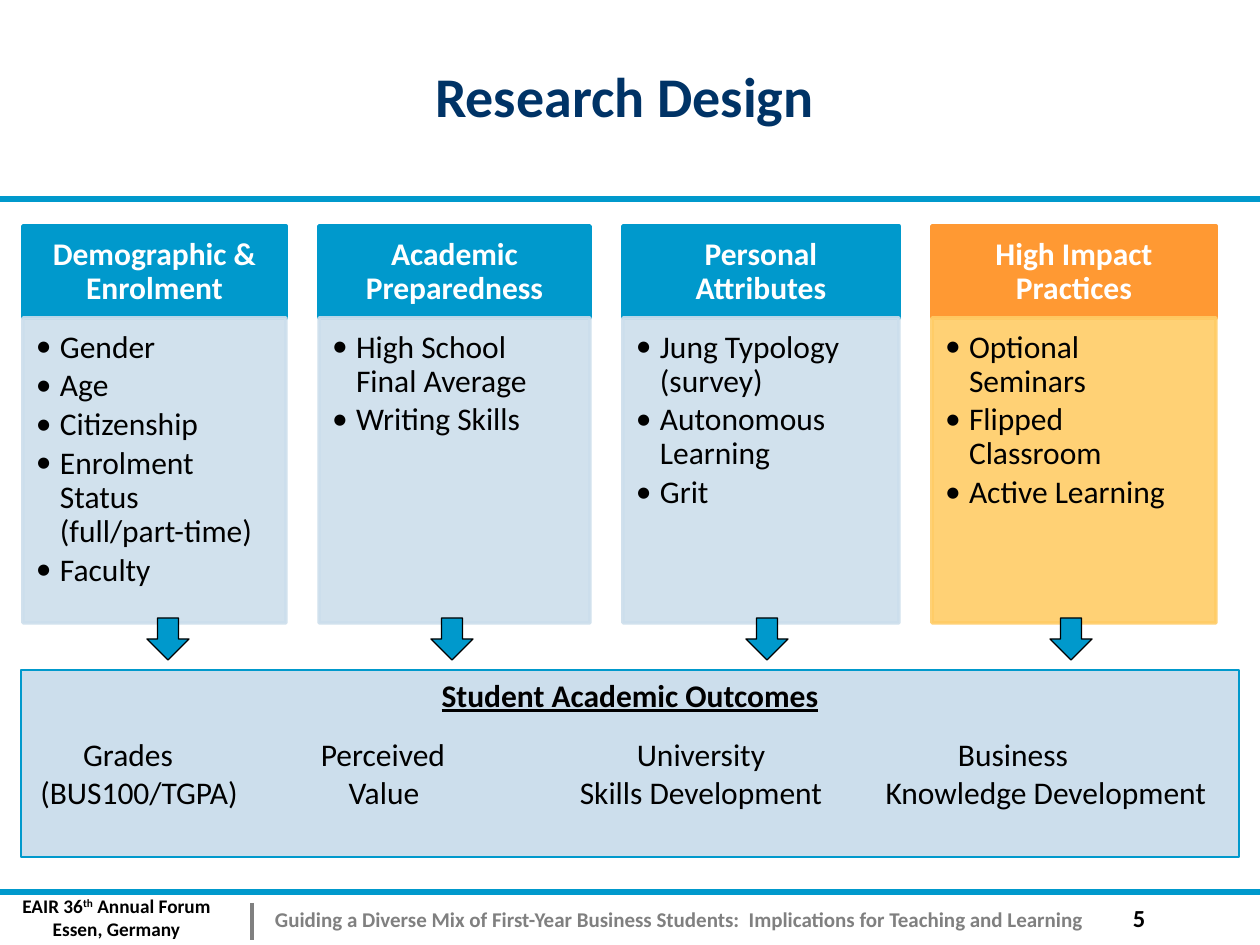
import dataclasses

import lxml.etree
import pptx
import pptx.dml.color
import pptx.enum.shapes
import pptx.enum.text
import pptx.oxml.ns
import pptx.util

SHAPE = pptx.enum.shapes.MSO_SHAPE
ALIGN = pptx.enum.text.PP_ALIGN
ANCHOR = pptx.enum.text.MSO_ANCHOR
qn = pptx.oxml.ns.qn


@dataclasses.dataclass(frozen=True)
class Theme:
    font: str = "Calibri"
    navy: str = "003366"
    blue: str = "0099CC"
    pale_blue: str = "CCDEEC"
    orange: str = "FF9933"
    pale_orange: str = "FFCC66"
    white: str = "FFFFFF"
    black: str = "000000"
    gray: str = "808080"
    title_size: int = 32
    body_size: int = 18
    number_size: int = 14
    footer_size: int = 12
    event_size: int = 11


def px(length):
    return pptx.util.Emu(round(length * 914400 / 126))


def rgb(color):
    return pptx.dml.color.RGBColor.from_string(color)


class SlideBuilder:
    """Draws styled elements on the current slide."""

    def __init__(self, theme, slide):
        self.theme = theme
        self.slide = slide

    def line(self, start, end, color, width):
        connector = self.slide.shapes.add_connector(
            pptx.enum.shapes.MSO_CONNECTOR.STRAIGHT, *map(px, start + end))
        connector.line.color.rgb = rgb(color)
        connector.line.width = pptx.util.Pt(width)
        lxml.etree.SubElement(connector._element.spPr, qn("a:effectLst"))

    def shape(self, kind, box, fill, line, width, opacity=100):
        shape = self.slide.shapes.add_shape(kind, *map(px, box))
        shape.shadow.inherit = False
        shape.fill.solid()
        shape.fill.fore_color.rgb = rgb(fill)
        shape.line.color.rgb = rgb(line)
        shape.line.width = pptx.util.Pt(width)
        if opacity < 100:
            for color in shape._element.spPr.iter(qn("a:srgbClr")):
                lxml.etree.SubElement(color, qn("a:alpha"), val=str(opacity * 1000))
        return shape

    def text_box(self, box, anchor=ANCHOR.TOP):
        shape = self.slide.shapes.add_textbox(*map(px, box))
        self.frame(shape, anchor)
        return shape

    def frame(self, shape, anchor, insets=(13, 6, 13, 6)):
        frame = shape.text_frame
        frame.word_wrap = True
        frame.vertical_anchor = anchor
        (frame.margin_left, frame.margin_top,
         frame.margin_right, frame.margin_bottom) = map(px, insets)

    def paragraph(self, shape, text, size, color, bold=False, align=ALIGN.LEFT,
                  spacing=1.0, after=0, bullet=False, tabs=(), tab_align="ctr"):
        frame = shape.text_frame
        paragraph = frame.paragraphs[0]
        if paragraph.runs:
            paragraph = frame.add_paragraph()
        paragraph.alignment = align
        paragraph.line_spacing = spacing
        paragraph.space_after = pptx.util.Pt(after)
        properties = paragraph._p.get_or_add_pPr()
        if bullet:
            properties.set("marL", str(px(24)))
            properties.set("indent", str(-px(24)))
            lxml.etree.SubElement(properties, qn("a:buFont"), typeface=self.theme.font)
            lxml.etree.SubElement(properties, qn("a:buChar"), char="•")
        if tabs:
            tab_list = lxml.etree.SubElement(properties, qn("a:tabLst"))
            for position in tabs:
                lxml.etree.SubElement(tab_list, qn("a:tab"), pos=str(px(position)), algn=tab_align)
        paragraph.font.name = self.theme.font
        paragraph.font.size = pptx.util.Pt(size)
        paragraph.font.bold = bold
        paragraph.font.color.rgb = rgb(color)
        paragraph.add_run().text = text
        return paragraph

    def column(self, left, width, heading, items, dark, pale):
        theme = self.theme
        header = self.shape(SHAPE.RECTANGLE, (left, 226, width, 92), dark, dark, 2)
        self.frame(header, ANCHOR.MIDDLE, (18, 10, 18, 10))
        self.paragraph(header, heading, theme.body_size, theme.white, True, ALIGN.CENTER, 0.9)
        body = self.shape(SHAPE.RECTANGLE, (left, 318, width, 305), pale, pale, 2, 90)
        self.frame(body, ANCHOR.TOP, (13, 13, 18, 20))
        for item in items:
            self.paragraph(body, item, theme.body_size, theme.black,
                           spacing=0.9, after=2.7, bullet=True)

    def arrow(self, left):
        self.shape(SHAPE.DOWN_ARROW, (left, 618, 42, 42), self.theme.blue, self.theme.black, 0.75)

    def outcomes(self, heading, rows):
        theme = self.theme
        panel = self.shape(SHAPE.RECTANGLE, (21, 670, 1218, 187), theme.pale_blue, theme.blue, 1.5)
        self.frame(panel, ANCHOR.TOP)
        title = self.paragraph(panel, heading, theme.body_size, theme.black,
                               True, ALIGN.CENTER, after=12)
        title.font.underline = True
        for labels, centers in rows:
            self.paragraph(panel, "".join("\t" + label for label in labels),
                           theme.body_size, theme.black, tabs=centers)

    def footer(self, event, place, talk, number):
        theme = self.theme
        box = self.text_box((6, 888, 221, 59))
        first = self.paragraph(box, event[0], theme.event_size, theme.black, True, ALIGN.CENTER)
        ordinal = first.add_run()
        ordinal.text = event[1]
        ordinal.font._element.set("baseline", "30000")
        first.add_run().text = event[2]
        self.paragraph(box, place, theme.event_size, theme.black, True, ALIGN.CENTER)
        box = self.text_box((262, 897, 971, 43))
        paragraph = self.paragraph(box, talk + "\t", theme.footer_size, theme.gray, True,
                                   tabs=(858,), tab_align="l")
        page = paragraph.add_run()
        page.text = number
        page.font.size = pptx.util.Pt(theme.number_size)
        page.font.color.rgb = rgb(theme.black)
        self.line((252, 903), (252, 940), theme.gray, 2.75)


def main():
    theme = Theme()
    presentation = pptx.Presentation()
    presentation.slide_width, presentation.slide_height = px(1260), px(945)
    builder = SlideBuilder(theme, presentation.slides.add_slide(presentation.slide_layouts[6]))

    for y in (199, 892):
        builder.line((0, y), (1260, y), theme.blue, 3.25)
    builder.footer(("EAIR 36", "th", " Annual Forum"), "Essen, Germany",
                   "Guiding a Diverse Mix of First-Year Business Students:  "
                   "Implications for Teaching and Learning", "5")
    title = builder.text_box((42, 54, 1165, 81), ANCHOR.BOTTOM)
    builder.paragraph(title, "Research Design", theme.title_size, theme.navy, True, ALIGN.CENTER)

    blues = (theme.blue, theme.pale_blue)
    oranges = (theme.orange, theme.pale_orange)
    columns = (
        (263, "Demographic & Enrolment",
         ("Gender", "Age", "Citizenship", "Enrolment Status (full/part-time)", "Faculty"), blues),
        (271, "Academic Preparedness", ("High School Final Average", "Writing Skills"), blues),
        (276, "Personal Attributes",
         ("Jung Typology (survey)", "Autonomous Learning", "Grit"), blues),
        (284, "High Impact Practices",
         ("Optional Seminars", "Flipped Classroom", "Active Learning"), oranges),
    )
    left, gap = 23, 33
    for width, heading, items, colors in columns:
        builder.column(left, width, heading, items, *colors)
        left += width + gap
    for arrow_left in (147, 431, 746, 1050):
        builder.arrow(arrow_left)

    builder.outcomes("Student Academic Outcomes", (
        (("Grades", "Perceived", "University", "Business"), (94, 349, 667, 979)),
        (("(BUS100/TGPA)", "Value", "Skills Development", "Knowledge Development"),
         (105, 350, 667, 1012)),
    ))
    presentation.save("out.pptx")


if __name__ == "__main__":
    main()
